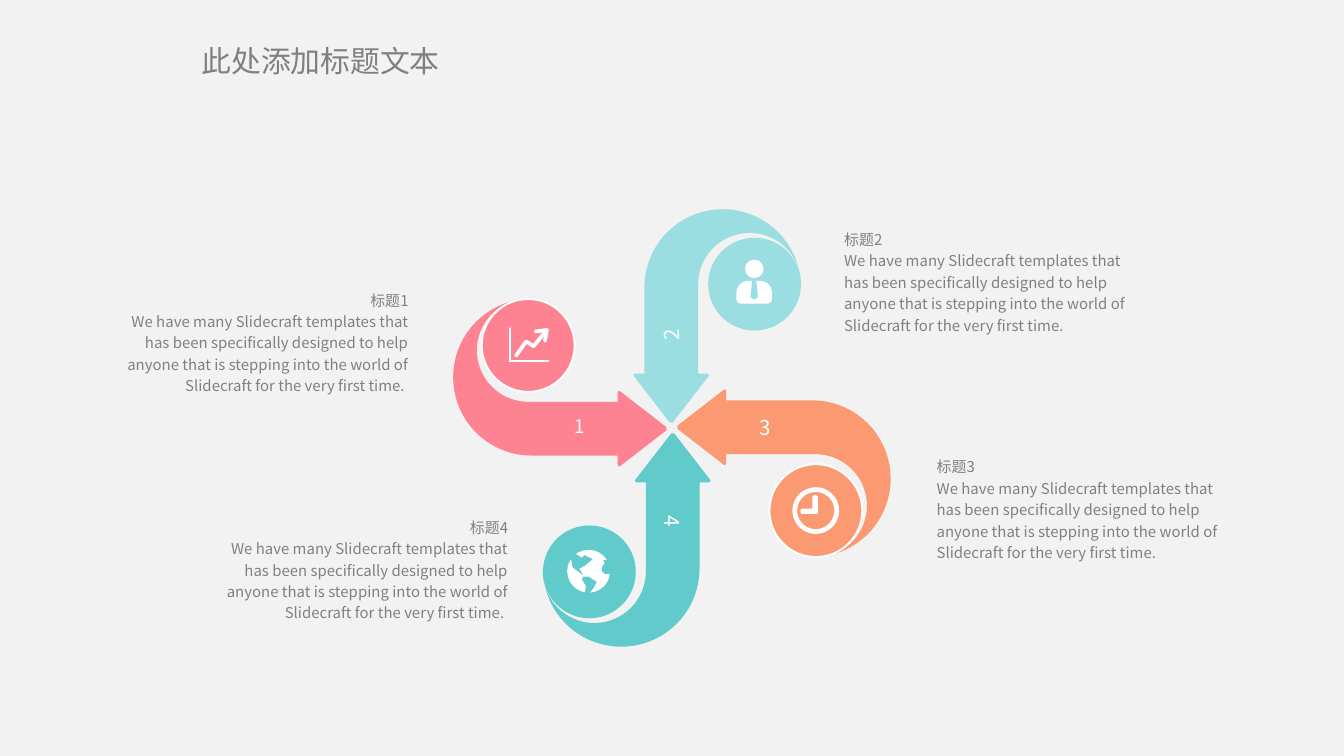
import math
from itertools import pairwise

from lxml import etree
from pptx import Presentation
from pptx.dml.color import RGBColor
from pptx.enum import shapes, text
from pptx.oxml import ns
from pptx.util import Pt

GRAY = RGBColor(0x80, 0x80, 0x80)
WHITE = RGBColor(0xFF, 0xFF, 0xFF)
PAPER = RGBColor(0xF2, 0xF2, 0xF2)
PINK = RGBColor(0xFD, 0x83, 0x92)
AQUA = RGBColor(0x9B, 0xDE, 0xE2)
ORANGE = RGBColor(0xFB, 0x99, 0x73)
TEAL = RGBColor(0x61, 0xCA, 0xCB)
FONT = "Noto Sans CJK SC"
LEFT, CENTER, RIGHT = text.PP_ALIGN.LEFT, text.PP_ALIGN.CENTER, text.PP_ALIGN.RIGHT
KIND = shapes.MSO_SHAPE
BODY = ("We have many Slidecraft templates that has been specifically designed to help "
        "anyone that is stepping into the world of Slidecraft for the very first time.")

# Points are complex numbers x + yj, so multiplying by 1j is a quarter turn clockwise.
HUB = 360 + 229.3j           # the four arrows meet here
TIP = 0.4 + 2.5j             # tip of the upward arrow, from the hub
HEAD_HALF, HEAD_LENGTH = 20.3, 26.6
SHAFT_HALF = 14.4
INNER_RADIUS = 27.6
OUTER_RADIUS = INNER_RADIUS + SHAFT_HALF  # makes both bends meet in a pointed tail
OUTER_Y, INNER_Y = 72.7, 74.4             # heights of the bend centers
DISC_CENTER, DISC = -44.65 + 74.55j, 49.7
NUMBER_DISTANCE, NUMBER_BOX = 49.7, 20.9

prs = Presentation()
prs.slide_width, prs.slide_height = Pt(720), Pt(405)
s = prs.slides.add_slide(prs.slide_layouts[5])
s.background.fill.solid()
s.background.fill.fore_color.rgb = PAPER


def draw(color, center, form, width=0, height=0):
    """Add a filled shape: a preset kind, or a list of points around the center."""
    if isinstance(form, list):
        points = [(Pt((center + c).real), Pt((center + c).imag)) for c in form]
        fb = s.shapes.build_freeform(*points[0])
        fb.add_line_segments(points[1:], close=True)
        sp = fb.convert_to_shape()
    else:
        sp = s.shapes.add_shape(form, Pt(center.real - width / 2), Pt(center.imag - height / 2),
                                Pt(width), Pt(height))
    sp.shadow.inherit = False
    sp.fill.solid()
    sp.fill.fore_color.rgb = color
    sp.line.fill.background()
    return sp


def write(tf, lines, size, color, align, spacing=1.0):
    tf.text = "\n".join(lines)
    tf.vertical_anchor = text.MSO_ANCHOR.TOP
    for p in tf.paragraphs:
        p.alignment, p.line_spacing = align, spacing
        for r in p.runs:
            r.font.size, r.font.name, r.font.color.rgb = Pt(size), FONT, color
            etree.SubElement(r.font._element, ns.qn("a:ea"), typeface=FONT)


# Title
sp = s.shapes.title
sp.left, sp.top, sp.width, sp.height = Pt(100.8), Pt(19), Pt(144), Pt(26.6)
write(sp.text_frame, ["此处添加标题文本"], 16, GRAY, LEFT)
sp.text_frame.word_wrap = False
sp.text_frame.auto_size = text.MSO_AUTO_SIZE.NONE

# Upward hooked arrow: right side of the head, outer bend, inner bend, left side
half_circle = [complex(math.cos(math.radians(a)), math.sin(math.radians(a)))
               for a in range(0, 181, 5)]
outer_center = complex(SHAFT_HALF - OUTER_RADIUS, OUTER_Y)
inner_center = complex(-SHAFT_HALF - INNER_RADIUS, INNER_Y)
right_side = [complex(0.8, 0.4), complex(HEAD_HALF, HEAD_LENGTH - 1),
              complex(HEAD_HALF - 0.6, HEAD_LENGTH), complex(SHAFT_HALF, HEAD_LENGTH)]
left_side = [-c.conjugate() for c in reversed(right_side)]
outer_bend = [outer_center + OUTER_RADIUS * c for c in half_circle]
inner_bend = [inner_center + INNER_RADIUS * c for c in reversed(half_circle)]
arrow = right_side + outer_bend + inner_bend + left_side

# Arrows, discs and numbers, turned about the hub
discs = {}
# name, color, quarter turns, white rim, number, number size, number angle
for name, color, turns, rim, number, size, angle in [
        ("globe", TEAL, 0, False, "4", 11, 90), ("person", AQUA, 2, False, "2", 11, 270),
        ("chart", PINK, 1, True, "1", 10, 0), ("clock", ORANGE, 3, True, "3", 11, 0)]:
    turn = 1j ** turns
    draw(color, HUB + TIP * turn, [c * turn for c in arrow])
    discs[name] = HUB + (TIP + DISC_CENTER) * turn
    sp = draw(color, discs[name], KIND.OVAL, DISC, DISC)
    if rim:
        sp.line.color.rgb, sp.line.width = WHITE, Pt(1)
    corner = HUB + NUMBER_DISTANCE * 1j * turn - NUMBER_BOX / 2 * (1 + 1j)
    sp = s.shapes.add_textbox(Pt(corner.real), Pt(corner.imag), Pt(NUMBER_BOX), Pt(NUMBER_BOX))
    sp.rotation = angle
    write(sp.text_frame, [number], size, WHITE, CENTER)
    sp.text_frame.word_wrap = False

# Clock icon: ring and two hands
ring = draw(WHITE, discs["clock"], KIND.DONUT, 25, 25)
ring.adjustments[0] = 0.1
for offset, width, height in [(-0.3 - 3.2j, 2.9, 10.1), (-3.5 + 0.4j, 9.4, 2.9)]:
    hand = draw(WHITE, discs["clock"] + offset, KIND.ROUNDED_RECTANGLE, width, height)
    hand.adjustments[0] = 0.4

# Person icon: head, torso and tie
person = discs["person"] - 0.2
draw(WHITE, person - 8.2j, KIND.OVAL, 10, 10)
torso = draw(WHITE, person + 4.4j, KIND.ROUND_2_SAME_RECTANGLE, 19, 12.2)
torso.adjustments[0], torso.adjustments[1] = 0.5, 0.2
draw(AQUA, person, [-1.1 - 2j, 1.1 - 2j, 2 + 6.9j, 8.3j, -2 + 6.9j])

# Globe icon: white land with patches of water
globe = discs["globe"] - 0.4 - 0.3j
draw(WHITE, globe, KIND.OVAL, 23, 23)
north = [-10.1 - 6.5j, -10 - 9j, -7.2 - 9.4j, -3.6 - 7.2j, -2.2 - 8.6j, 2.2 - 6.5j,
         -2.2 - 2.9j, -5 - 1.4j, -2.9 + 2.2j, -8.6 - 2.2j, -9.4 - 6.5j]
south = [-2.2 + 12.2j, -1.4 + 7.9j, -3.6 + 4.3j, -2.9 + 2.9j, 2.9j, 4.3 + 5.8j,
         2.9 + 8.6j, 12.2j]
east = [11.9 - 6.5j, 7.9 - 5.8j, 8.6 - 4.3j, 7.2 - 2.2j, 7.2 + 0j, 8.6 + 1.4j, 11.9 + 1.4j]
for water in (north, south, east):
    draw(TEAL, globe, water)

# Chart icon: round-ended strokes
axes = [-9.7 - 9j, -9.7 + 8.4j, 10.8 + 8.4j]
trend = [-6.5 + 5.5j, -1.1 - 2.1j, 2.9 + 0.4j, 10 - 8.2j]
trend_head = [4 - 7.5j, 10 - 8.2j, 9 - 2.5j]
for stroke, weight in [(axes, 1.5), (trend, 2), (trend_head, 2)]:
    for a, b in pairwise(discs["chart"] + c for c in stroke):
        sp = s.shapes.add_connector(shapes.MSO_CONNECTOR.STRAIGHT, Pt(a.real), Pt(a.imag),
                                    Pt(b.real), Pt(b.imag))
        sp.line.color.rgb, sp.line.width = WHITE, Pt(weight)
        spPr = sp._element.spPr
        spPr.find(ns.qn("a:ln")).set("cap", "rnd")
        etree.SubElement(spPr, ns.qn("a:effectLst"))

# Captions
for heading, x, y, align in [("标题3", 501.8, 243.4, LEFT), ("标题4", 113.8, 275.8, RIGHT),
                             ("标题2", 452.2, 121.7, LEFT), ("标题1", 60.5, 154.1, RIGHT)]:
    sp = s.shapes.add_textbox(Pt(x), Pt(y), Pt(158.4), Pt(69.8))
    tf = sp.text_frame
    tf.word_wrap = True
    tf.margin_left = tf.margin_right = tf.margin_top = tf.margin_bottom = 0
    write(tf, [heading, BODY + (" " if align == RIGHT else "")], 8, GRAY, align, 1.2)

prs.save("out.pptx")
